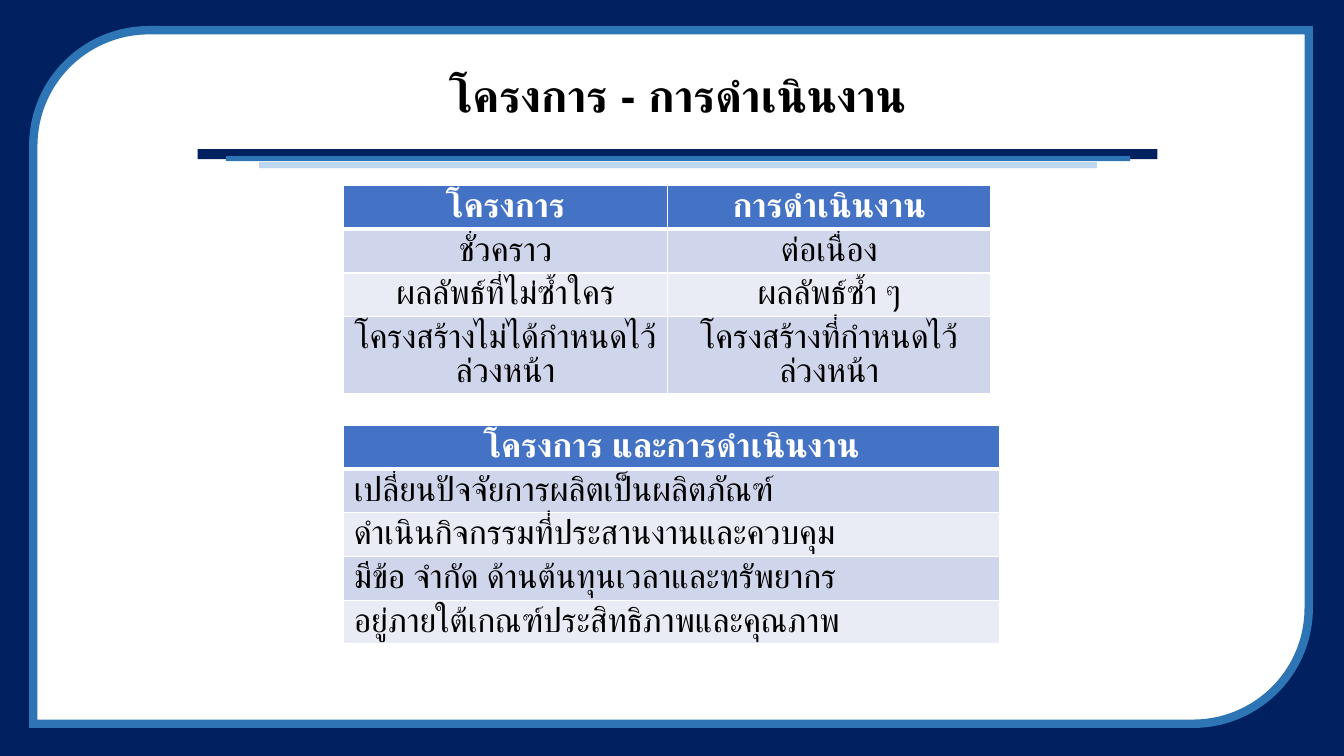
from dataclasses import dataclass

from lxml import etree
from pptx import Presentation
from pptx.dml.color import RGBColor
from pptx.enum import lang, shapes, text
from pptx.oxml import ns
from pptx.util import Inches, Pt

NAVY, BLUE, PALE, WHITE, BLACK = "002060", "2E75B6", "BDD7EE", "FFFFFF", "000000"
HEADER, BANDS = "4472C4", ("CFD5EA", "E9EBF5")
CENTER, LEFT = text.PP_ALIGN.CENTER, text.PP_ALIGN.LEFT


@dataclass
class Panel:
    left: float
    top: float
    width: float
    height: float
    fill: str
    shape: shapes.MSO_SHAPE = shapes.MSO_SHAPE.RECTANGLE
    line: str = ""


@dataclass
class Grid:
    left: float
    top: float
    column: float
    font: str
    body_align: text.PP_ALIGN
    heights: list
    rows: list


PANELS = [
    Panel(0, 0, 13.33, 7.5, NAVY),
    Panel(0.33, 0.3, 12.65, 6.88, WHITE, shapes.MSO_SHAPE.ROUND_2_DIAG_RECTANGLE, BLUE),
    Panel(1.96, 1.48, 9.52, 0.1, NAVY),
    Panel(2.24, 1.55, 8.97, 0.05, BLUE),
    Panel(2.57, 1.61, 8.31, 0.06, PALE),
]
GRIDS = [
    Grid(3.41, 1.84, 3.21, "Calibri", CENTER, [0.43] * 3 + [0.76], [
        ["โครงการ", "การดำเนินงาน"],
        ["ชั่วคราว", "ต่อเนื่อง"],
        ["ผลลัพธ์ที่ไม่ซ้ำใคร", "ผลลัพธ์ซ้ำ ๆ"],
        ["โครงสร้างไม่ได้กำหนดไว้ล่วงหน้า", "โครงสร้างที่กำหนดไว้ล่วงหน้า"],
    ]),
    Grid(3.41, 4.22, 6.5, "Arial", LEFT, [0.43] * 5, [
        ["โครงการ และการดำเนินงาน"],
        ["เปลี่ยนปัจจัยการผลิตเป็นผลิตภัณฑ์"],
        ["ดำเนินกิจกรรมที่ประสานงานและควบคุม"],
        ["มีข้อ จำกัด ด้านต้นทุนเวลาและทรัพยากร"],
        ["อยู่ภายใต้เกณฑ์ประสิทธิภาพและคุณภาพ"],
    ]),
]


def rgb(color: str) -> RGBColor:
    return RGBColor.from_string(color)


def write(para, words: str, align, color: str, **font_values) -> None:
    para.alignment = align
    span = para.add_run()
    span.text = words
    span.font.color.rgb = rgb(color)
    span.font.language_id = lang.MSO_LANGUAGE_ID.THAI
    for name, value in font_values.items():
        setattr(span.font, name, value)


def draw_panel(page, panel: Panel) -> None:
    box = page.shapes.add_shape(panel.shape, Inches(panel.left), Inches(panel.top),
                                Inches(panel.width), Inches(panel.height))
    box.shadow.inherit = False
    box.fill.solid()
    box.fill.fore_color.rgb = rgb(panel.fill)
    if panel.line:
        box.line.color.rgb = rgb(panel.line)
        box.line.width = Pt(6)
        outline = box._element.spPr.find(ns.qn("a:ln"))
        etree.SubElement(outline, ns.qn("a:miter"), lim="800000")
    else:
        box.line.fill.background()


def add_borders(cell, row: int) -> None:
    """Draw white cell borders, thick between the header and the body."""
    widths = {"L": 1, "R": 1, "T": 3 if row == 1 else 1, "B": 3 if row == 0 else 1}
    properties = cell._tc.get_or_add_tcPr()
    for side, width in widths.items():
        line = etree.SubElement(properties, ns.qn(f"a:ln{side}"), w=str(Pt(width)))
        fill = etree.SubElement(line, ns.qn("a:solidFill"))
        etree.SubElement(fill, ns.qn("a:srgbClr"), val=WHITE)


def draw_grid(page, grid: Grid) -> None:
    columns = len(grid.rows[0])
    table = page.shapes.add_table(
        len(grid.rows), columns, Inches(grid.left), Inches(grid.top),
        Inches(grid.column * columns), Inches(sum(grid.heights))).table
    for row, (height, words) in enumerate(zip(grid.heights, grid.rows)):
        table.rows[row].height = Inches(height)
        header = row == 0
        for column, label in enumerate(words):
            cell = table.cell(row, column)
            cell.margin_top = cell.margin_bottom = Inches(0.05)
            add_borders(cell, row)
            cell.fill.solid()
            cell.fill.fore_color.rgb = rgb(HEADER if header else BANDS[(row - 1) % 2])
            write(cell.text_frame.paragraphs[0], label,
                  CENTER if header else grid.body_align,
                  WHITE if header else BLACK,
                  name=grid.font, size=Pt(24), bold=header)


def draw_title(page, words: str) -> None:
    title = page.shapes.title
    placement = {"left": 1.96, "top": 0.49, "width": 9.52, "height": 0.97}
    for name, value in placement.items():
        setattr(title, name, Inches(value))
    title.text_frame.vertical_anchor = text.MSO_ANCHOR.MIDDLE
    para = title.text_frame.paragraphs[0]
    para.line_spacing = 0.9
    write(para, words, CENTER, BLACK, name="Arial", size=Pt(32), bold=True)
    page.shapes._spTree.append(title._element)  # bring in front of the panels


def main() -> None:
    deck = Presentation()
    deck.slide_width, deck.slide_height = Inches(13.33), Inches(7.5)
    page = deck.slides.add_slide(deck.slide_layouts[5])
    for panel in PANELS:
        draw_panel(page, panel)
    draw_title(page, "โครงการ - การดำเนินงาน")
    for grid in GRIDS:
        draw_grid(page, grid)
    deck.save("out.pptx")


if __name__ == "__main__":
    main()
